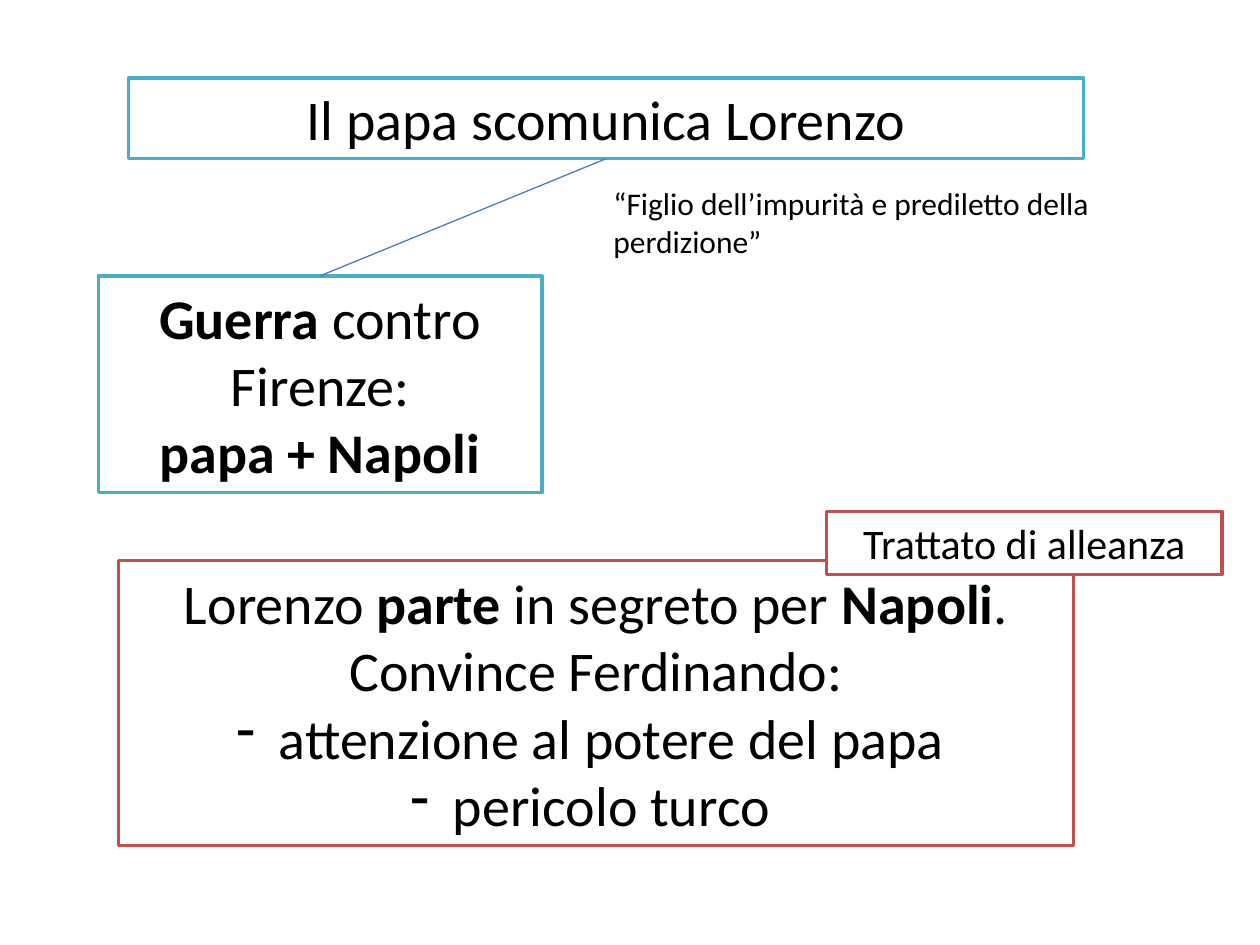
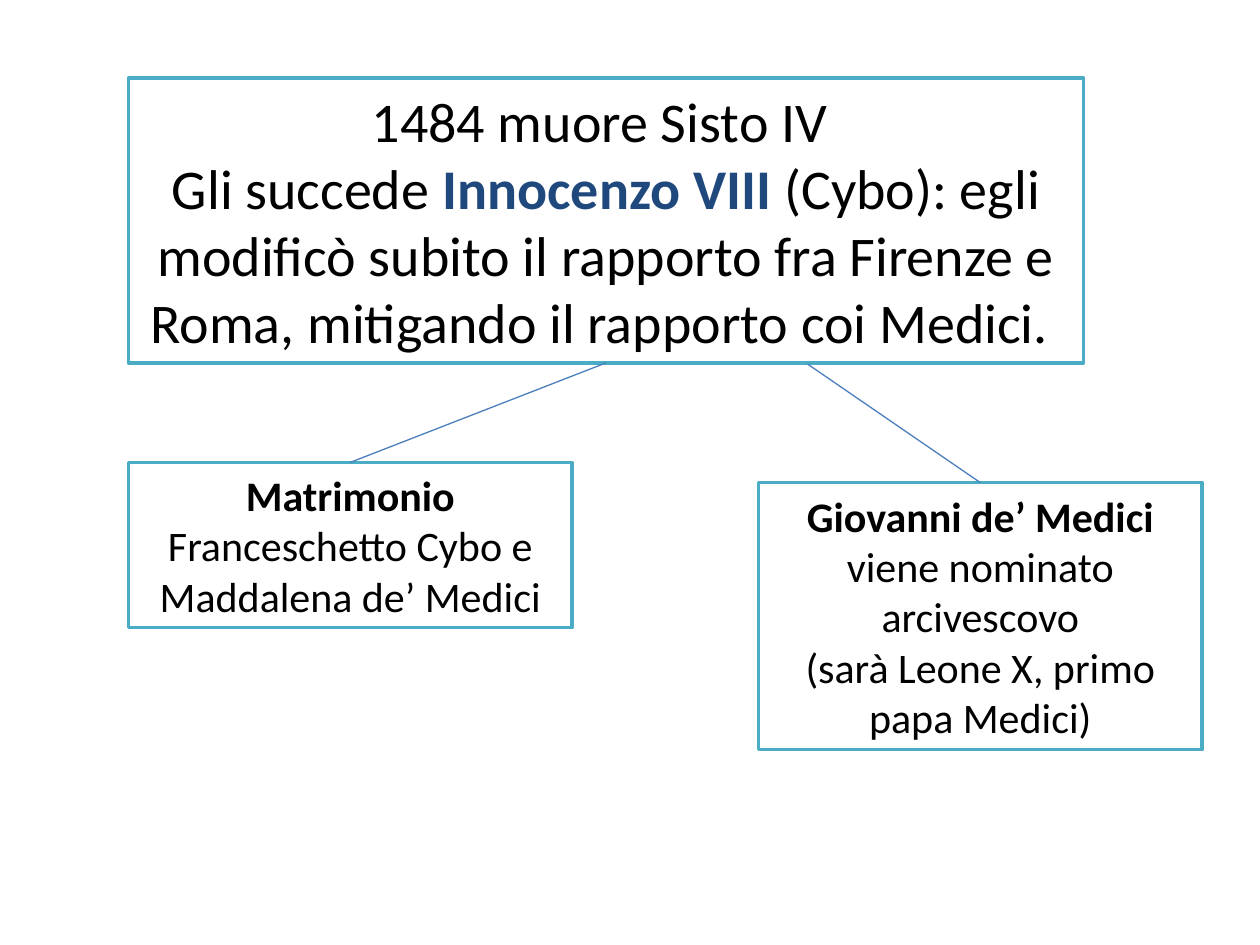
from lxml import etree
from pptx import Presentation
from pptx.dml.color import RGBColor
from pptx.enum.shapes import MSO_CONNECTOR, MSO_SHAPE
from pptx.enum.text import MSO_AUTO_SIZE, PP_ALIGN
from pptx.oxml.ns import qn
from pptx.util import Inches, Pt

RECTANGLE = MSO_SHAPE.RECTANGLE
STRAIGHT = MSO_CONNECTOR.STRAIGHT
FIT_SHAPE = MSO_AUTO_SIZE.SHAPE_TO_FIT_TEXT
CENTER = PP_ALIGN.CENTER
TOP, BOTTOM = 0, 2

FONT = "Calibri"
WHITE, BLACK, TEAL, RED = "FFFFFF", "000000", "4BACC6", "C0504D"
NAVY, LINK_BLUE = "1F497D", "4B7EBC"
LARGE, MEDIUM, SMALL = 32, 24, 18

# Content: a paragraph is a list of runs, a run is (text, bold[, colour]).
# A paragraph whose first item is DASH gets a dash bullet.
DASH = "-"
SCOMUNICA = [[("Il papa scomunica Lorenzo", False)]]
GUERRA = [
    [("Guerra ", True), ("contro Firenze:", False)],
    [("papa + Napoli", True)],
]
VIAGGIO = [
    [("Lorenzo ", False), ("parte", True), (" in segreto per ", False),
     ("Napoli", True), (".", False)],
    [("Convince Ferdinando:", False)],
    [DASH, (" attenzione al potere del papa", False)],
    [DASH, (" pericolo turco", False)],
]
CITAZIONE = [[("“Figlio dell’impurità e prediletto della perdizione”", False)]]
TRATTATO = [[("Trattato di alleanza", False)]]
INNOCENZO = [
    [("1484 muore Sisto IV ", False)],
    [("Gli succede ", False), ("Innocenzo VIII ", True, NAVY),
     ("(Cybo): egli modificò subito il rapporto fra Firenze e Roma, "
      "mitigando il rapporto coi Medici. ", False)],
]
MATRIMONIO = [
    [("Matrimonio", True)],
    [("Franceschetto Cybo e Maddalena de’ Medici", False)],
]
GIOVANNI = [
    [("Giovanni de’ Medici ", True), ("viene nominato arcivescovo", False)],
    [("(sarà Leone X, primo papa Medici)", False)],
]

# Shared layout
HEAD_LEFT, HEAD_TOP = 1.02, 0.62
WIDE, NARROW = 7.58, 3.52


def rgb(color):
    return RGBColor.from_string(color)


def write(shape, paragraphs, size, align=None):
    frame = shape.text_frame
    frame.word_wrap = True
    frame.auto_size = FIT_SHAPE
    for index, runs in enumerate(paragraphs):
        paragraph = frame.paragraphs[0] if index == 0 else frame.add_paragraph()
        paragraph.alignment = align
        paragraph.font.name = FONT
        paragraph.font.size = Pt(size)
        paragraph.font.color.rgb = rgb(BLACK)
        if runs[0] == DASH:
            runs = runs[1:]
            bullet = etree.Element(qn("a:buChar"), char=DASH)
            paragraph.font._element.addprevious(bullet)
        for text, bold, *color in runs:
            run = paragraph.add_run()
            run.text = text
            run.font.bold = bold
            if color:
                run.font.color.rgb = rgb(color[0])


def add_box(slide, place, paragraphs, size, outline=TEAL):
    box = slide.shapes.add_shape(RECTANGLE, *map(Inches, place))
    box.shadow.inherit = False
    box.fill.solid()
    box.fill.fore_color.rgb = rgb(WHITE)
    box.line.color.rgb = rgb(outline)
    box.line.width = Pt(2)
    write(box, paragraphs, size, CENTER)
    return box


def add_link(slide, parent, child, start=None):
    """Join parent's bottom to child's top, or begin at a free point."""
    begin = map(Inches, start or (0, 0))
    link = slide.shapes.add_connector(STRAIGHT, *begin, 0, 0)
    if start is None:
        link.begin_connect(parent, BOTTOM)
    link.end_connect(child, TOP)
    link.line.color.rgb = rgb(LINK_BLUE)
    link.line.width = Pt(0.75)
    etree.SubElement(link._element.spPr, qn("a:effectLst"))


def build_war(slide):
    scomunica = add_box(slide, (HEAD_LEFT, HEAD_TOP, WIDE, 0.64), SCOMUNICA, LARGE)
    guerra = add_box(slide, (0.78, 2.19, NARROW, 1.72), GUERRA, LARGE)
    add_box(slide, (0.94, 4.45, WIDE, 2.26), VIAGGIO, LARGE, RED)
    add_link(slide, scomunica, guerra)
    citazione = slide.shapes.add_textbox(*map(Inches, (4.77, 1.41, 5, 0.71)))
    write(citazione, CITAZIONE, SMALL)
    add_box(slide, (6.56, 4.06, 3.14, 0.5), TRATTATO, MEDIUM, RED)


def build_new_pope(slide):
    innocenzo = add_box(slide, (HEAD_LEFT, HEAD_TOP, WIDE, 2.26), INNOCENZO, LARGE)
    matrimonio = add_box(slide, (HEAD_LEFT, 3.67, NARROW, 1.31), MATRIMONIO, MEDIUM)
    add_link(slide, innocenzo, matrimonio)
    giovanni = add_box(slide, (6.02, 3.83, NARROW, 2.12), GIOVANNI, MEDIUM)
    add_link(slide, innocenzo, giovanni, start=(6.41, 2.89))


def main():
    deck = Presentation()
    deck.slide_width, deck.slide_height = Inches(10), Inches(7.5)
    blank = deck.slide_layouts[6]
    for build in (build_war, build_new_pope):
        build(deck.slides.add_slide(blank))
    deck.save("out.pptx")


if __name__ == "__main__":
    main()
